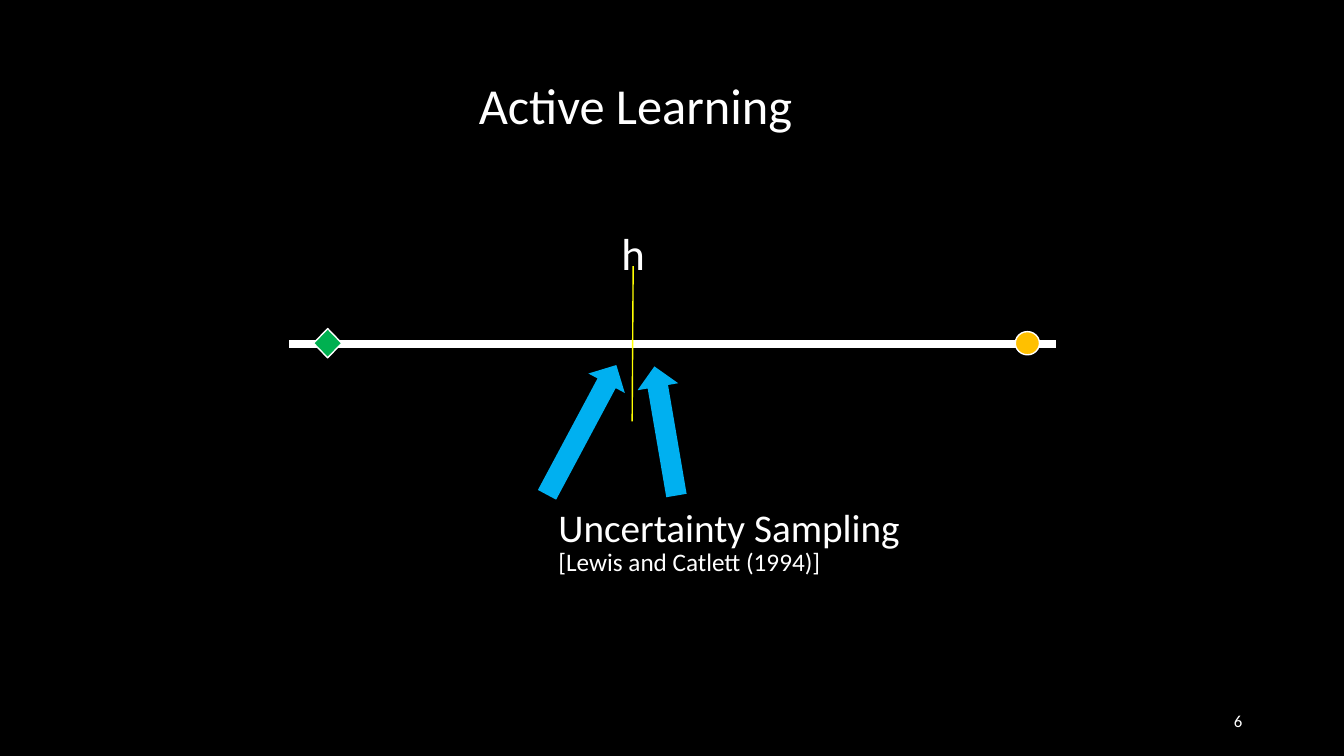
from dataclasses import dataclass
from typing import Optional

from lxml import etree
from pptx import Presentation
from pptx.dml.color import RGBColor
from pptx.enum.shapes import MSO_CONNECTOR, MSO_SHAPE
from pptx.enum.text import MSO_ANCHOR, PP_ALIGN
from pptx.oxml.ns import qn
from pptx.slide import Slide
from pptx.util import Inches, Pt

BLACK = RGBColor(0x00, 0x00, 0x00)
WHITE = RGBColor(0xFF, 0xFF, 0xFF)
GREEN = RGBColor(0x00, 0xB0, 0x50)
AMBER = RGBColor(0xFF, 0xC0, 0x00)
YELLOW = RGBColor(0xFF, 0xFF, 0x00)
BLUE = RGBColor(0x00, 0xB0, 0xF0)
FONT = "Calibri"


@dataclass
class Line:
    x1: float
    y1: float
    x2: float
    y2: float
    color: RGBColor
    width: float


@dataclass
class Figure:
    kind: MSO_SHAPE
    x: float
    y: float
    w: float
    h: float
    fill: RGBColor
    outline: Optional[RGBColor] = None
    rotation: float = 0


@dataclass
class Label:
    text: str
    x: float
    y: float
    w: float
    h: float
    size: int
    align: PP_ALIGN = PP_ALIGN.LEFT
    anchor: MSO_ANCHOR = MSO_ANCHOR.TOP
    wrap: bool = True


AXIS = Line(2.87, 3.41, 10.47, 3.41, WHITE, 6)
THRESHOLD = Line(6.28, 2.64, 6.27, 4.18, YELLOW, 1)

EXAMPLES = [
    Figure(MSO_SHAPE.DIAMOND, 3.11, 3.26, 0.28, 0.29, GREEN, WHITE),
    Figure(MSO_SHAPE.OVAL, 10.07, 3.29, 0.24, 0.23, AMBER, WHITE),
]

ARROWS = [
    Figure(MSO_SHAPE.RIGHT_ARROW, 5.04, 4.06, 1.46, 0.41, BLUE, rotation=298.1),
    Figure(MSO_SHAPE.RIGHT_ARROW, 5.95, 4.07, 1.3, 0.41, BLUE, rotation=260.3),
]

LABELS = [
    Label("[Lewis and Catlett (1994)]", 5.44, 5.37, 2.84, 0.4, 18, wrap=False),
    Label("Uncertainty Sampling", 5.44, 4.94, 4.68, 0.57, 28),
    Label("h", 6.06, 2.19, 0.44, 0.64, 32, PP_ALIGN.CENTER, wrap=False),
    Label("6", 9.42, 6.95, 3, 0.4, 12, PP_ALIGN.RIGHT, MSO_ANCHOR.MIDDLE),
    Label("Active Learning", 4.65, 0.69, 4.68, 0.71, 36),
]


def draw_line(s: Slide, line: Line) -> None:
    sp = s.shapes.add_connector(
        MSO_CONNECTOR.STRAIGHT,
        Inches(line.x1), Inches(line.y1), Inches(line.x2), Inches(line.y2),
    )
    sp.line.color.rgb = line.color
    sp.line.width = Pt(line.width)
    etree.SubElement(sp._element.spPr, qn("a:effectLst"))


def draw_figure(s: Slide, fig: Figure) -> None:
    sp = s.shapes.add_shape(
        fig.kind, Inches(fig.x), Inches(fig.y), Inches(fig.w), Inches(fig.h)
    )
    sp.shadow.inherit = False
    sp.rotation = fig.rotation
    sp.fill.solid()
    sp.fill.fore_color.rgb = fig.fill
    if fig.outline is None:
        sp.line.fill.background()
    else:
        sp.line.color.rgb = fig.outline
        sp.line.width = Pt(1)


def draw_label(s: Slide, label: Label) -> None:
    sp = s.shapes.add_textbox(
        Inches(label.x), Inches(label.y), Inches(label.w), Inches(label.h)
    )
    tf = sp.text_frame
    tf.word_wrap = label.wrap
    tf.vertical_anchor = label.anchor
    p = tf.paragraphs[0]
    p.alignment = label.align
    r = p.add_run()
    r.text = label.text
    r.font.name = FONT
    r.font.size = Pt(label.size)
    r.font.color.rgb = WHITE


def main() -> None:
    prs = Presentation()
    prs.slide_width = Inches(13.33)
    prs.slide_height = Inches(7.5)
    s = prs.slides.add_slide(prs.slide_layouts[6])
    s.background.fill.solid()
    s.background.fill.fore_color.rgb = BLACK

    draw_line(s, AXIS)
    for example in EXAMPLES:
        draw_figure(s, example)
    draw_line(s, THRESHOLD)
    for arrow in ARROWS:
        draw_figure(s, arrow)
    for label in LABELS:
        draw_label(s, label)

    prs.save("out.pptx")


if __name__ == "__main__":
    main()
